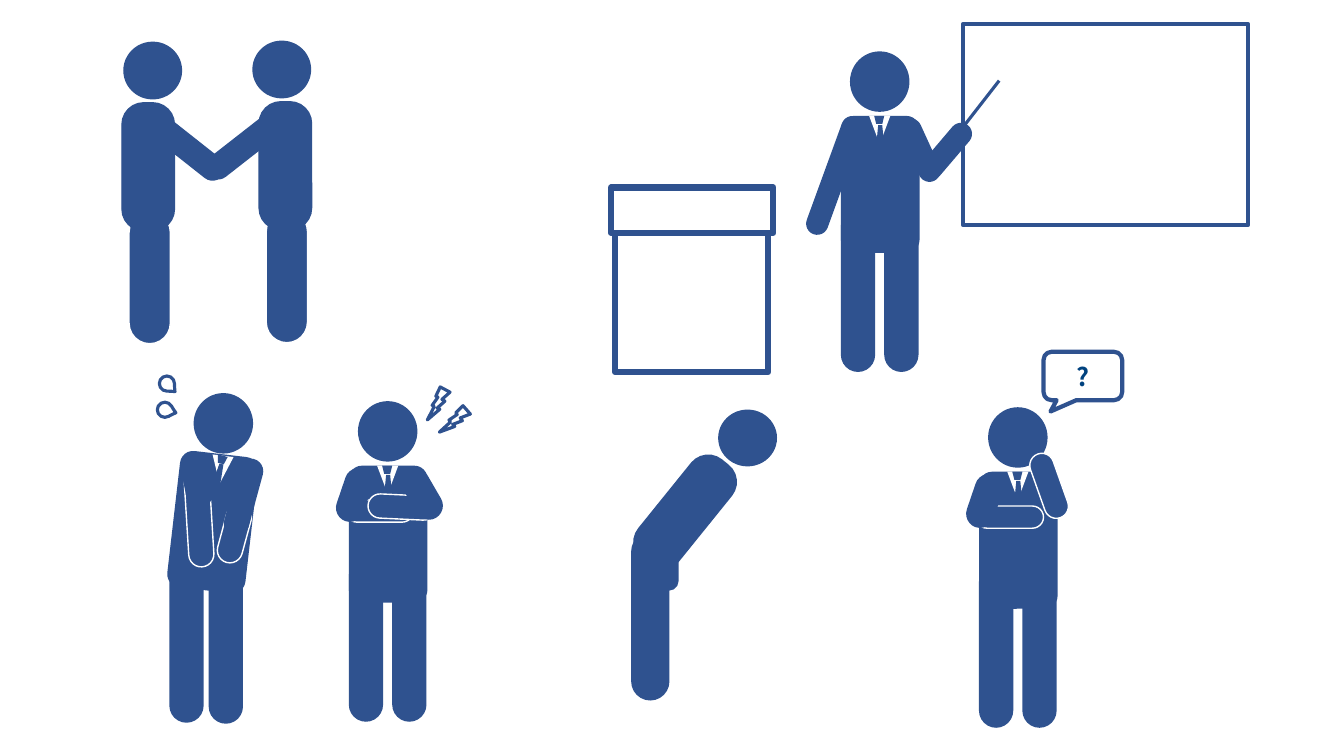
from pptx import Presentation
from pptx.dml.color import RGBColor
from pptx.enum.shapes import MSO_CONNECTOR as Link, MSO_SHAPE as Form
from pptx.enum.text import MSO_ANCHOR as Anchor, PP_ALIGN as Align
from pptx.oxml.ns import qn
from pptx.util import Pt
from lxml.etree import SubElement

PX = 9144  # one px is a hundredth of an inch
COLORS = {"navy": "2F528F", "white": "FFFFFF", "ink": "00427F"}
FONT = "Noto Sans CJK JP"


class Board:
    """Holds the current slide, the open group and the style."""

    def __init__(self, slide):
        self.slide = slide
        self.group()

    def group(self):
        self.shapes = self.slide.shapes.add_group_shape().shapes

    def loose(self):
        self.shapes = self.slide.shapes

    def color(self, name):
        return RGBColor.from_string(COLORS[name])

    def shape(self, form, x, y, w, h, turn=0, fill="navy", line=None,
              width=1, adjust=(), flip=False):
        item = self.shapes.add_shape(form, *(n * PX for n in (x, y, w, h)))
        item.rotation = turn
        item.shadow.inherit = False
        item.fill.solid()
        item.fill.fore_color.rgb = self.color(fill)
        if line:
            item.line.color.rgb = self.color(line)
            item.line.width = Pt(width)
        else:
            item.line.fill.background()
        for i, value in enumerate(adjust):
            item.adjustments[i] = value
        if flip:
            item.element.spPr.xfrm.set("flipH", "1")
        return item

    def limb(self, x, y, w, h, turn=0, line=None):
        self.shape(Form.ROUNDED_RECTANGLE, x, y, w, h, turn, line=line,
                   adjust=[0.5])

    def trunk(self, x, y, w, h, turn=0):
        self.shape(Form.ROUNDED_RECTANGLE, x, y, w, h, turn, line="navy",
                   adjust=[0.415])

    def head(self, x, y, w=59, h=60, line=None):
        self.shape(Form.OVAL, x, y, w, h, line=line)

    def frame(self, form, x, y, w, h, width, **more):
        return self.shape(form, x, y, w, h, fill="white", line="navy",
                          width=width, **more)

    def stick(self, x1, y1, x2, y2, width):
        line = self.shapes.add_connector(
            Link.STRAIGHT, *(n * PX for n in (x1, y1, x2, y2)))
        line.line.color.rgb = self.color("navy")
        line.line.width = Pt(width)
        SubElement(line.element.spPr, qn("a:effectLst"))

    def suit(self, x, y):
        """Draw a person who faces us, with the jacket's corner at x, y."""
        self.head(x + 9, y - 64)
        self.shape(Form.ROUNDED_RECTANGLE, x, y, 78, 136)
        for gap in (0, 43):
            self.limb(x + gap, y + 92, 34, 162)
        self.shape(Form.ISOSCELES_TRIANGLE, x + 28, y, 21, 28, 180, "white")
        self.shape(Form.TRAPEZOID, x + 33, y, 10, 8, 180)
        self.shape(Form.TRAPEZOID, x + 35, y + 9, 8, 21)

    def fold(self, x, y):
        """Draw the folded arm of the person whose jacket is at x, y."""
        self.limb(x - 3, y + 34, 67, 22, line="white")
        self.limb(x - 22, y + 15, 55, 28, 108.8)

    def label(self, item, text, size):
        frame = item.text_frame
        frame.text = text
        frame.vertical_anchor = Anchor.MIDDLE
        frame.margin_left = frame.margin_right = 0
        frame.margin_top = frame.margin_bottom = 0
        line = frame.paragraphs[0]
        line.alignment = Align.CENTER
        font = line.runs[0].font
        font.name, font.size, font.bold = FONT, Pt(size), True
        font.color.rgb = self.color("ink")


def main():
    deck = Presentation()
    deck.slide_width, deck.slide_height = 1333 * PX, 750 * PX
    slide = deck.slides.add_slide(deck.slide_layouts[6])

    # Whiteboard
    board = Board(slide)
    board.loose()
    board.frame(Form.RECTANGLE, 955, 24, 283, 199, 3)

    # Bowing person
    board.group()
    board.head(713, 407, 57, 55, "navy")
    board.trunk(654, 445, 51, 126, 38.9)
    board.limb(626, 528, 38, 167)
    board.limb(654, 525, 19, 61)

    # Angry person with crossed arms
    board.group()
    board.suit(346, 462)
    board.fold(346, 462)
    board.limb(365, 491, 67, 24, 2.7, "white")
    board.limb(391, 476, 55, 28, 59.8)

    # Sorry person, leaning to one side
    board.group()
    board.head(192, 390)
    board.shape(Form.ROUNDED_RECTANGLE, 172, 450, 78, 136, 6.6)
    board.limb(168, 555, 34, 162)
    board.limb(207, 556, 34, 162)
    board.shape(Form.ISOSCELES_TRIANGLE, 209, 452, 21, 28, 187.1, "white")
    board.shape(Form.TRAPEZOID, 215, 452, 10, 8, 194.4)
    board.shape(Form.TRAPEZOID, 213, 460, 8, 21, 14.4)
    board.limb(203, 517, 59, 25, 105.2, "white")
    board.limb(202, 481, 79, 25, 105.2)
    board.limb(141, 494, 112, 25, 86.5, "white")
    board.limb(170, 460, 53, 30, 78.1)

    # Thinking person with a speech bubble
    board.group()
    board.suit(971, 468)
    board.fold(971, 468)
    board.limb(1007, 470, 67, 24, 70.5, "white")
    bubble = board.frame(Form.ROUNDED_RECTANGULAR_CALLOUT, 1035, 349, 78, 48,
                         3, adjust=[-0.411, 0.734, 0.167])
    board.label(bubble, "?", 18)

    # Teacher with a pointer
    board.group()
    board.limb(766, 163, 124, 22, 290)
    board.limb(879, 138, 67, 22, 65.4)
    board.suit(834, 115)
    board.limb(905, 139, 67, 22, 130.4)
    board.stick(956, 125, 991, 80, 2.25)

    # Two people shaking hands
    board.group()
    for x, y, face, arm, turn in ((257, 101, -6, -25, 52),
                                  (121, 102, 2, 49, 128.3)):
        board.head(x + face, y - 60, 57, 56, "navy")
        board.limb(x + 7, y + 108, 41, 131, line="white")
        board.limb(x + arm, y - 6, 25, 97, turn)
        board.trunk(x, y, 52, 127)

    # Lectern
    board.group()
    board.frame(Form.RECTANGLE, 610, 204, 152, 165, 4.5)
    board.frame(Form.RECTANGLE, 606, 186, 161, 45, 4.5)

    # Sparks of anger and drops of sweat
    board.loose()
    for x, y, turn in ((423, 384, 356.8), (440, 401, 17.3)):
        board.frame(Form.LIGHTNING_BOLT, x, y, 24, 32, 2.25, turn=turn,
                    flip=True)
    for x, y, turn in ((156, 399, 150.3), (158, 373, 180)):
        board.frame(Form.TEAR, x, y, 15, 15, 2.25, turn=turn, flip=True,
                    adjust=[1.069])

    deck.save("out.pptx")


if __name__ == "__main__":
    main()
